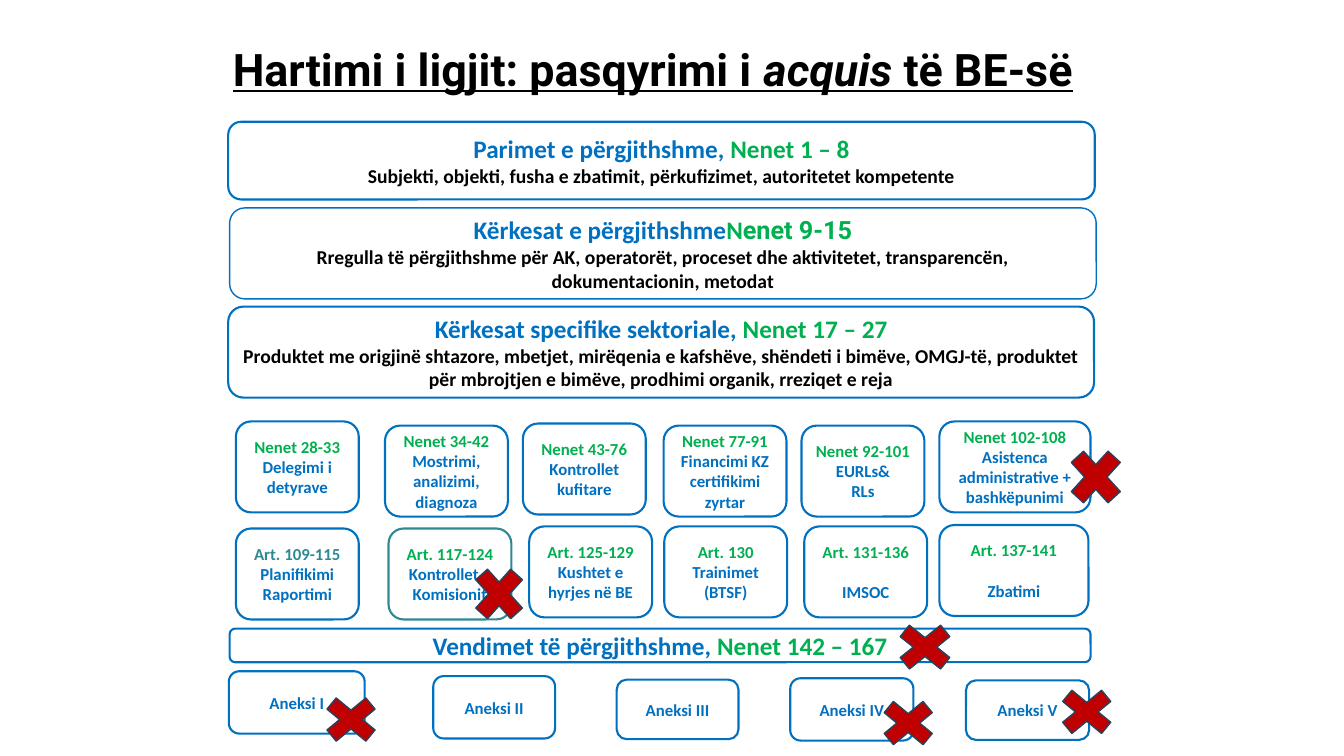
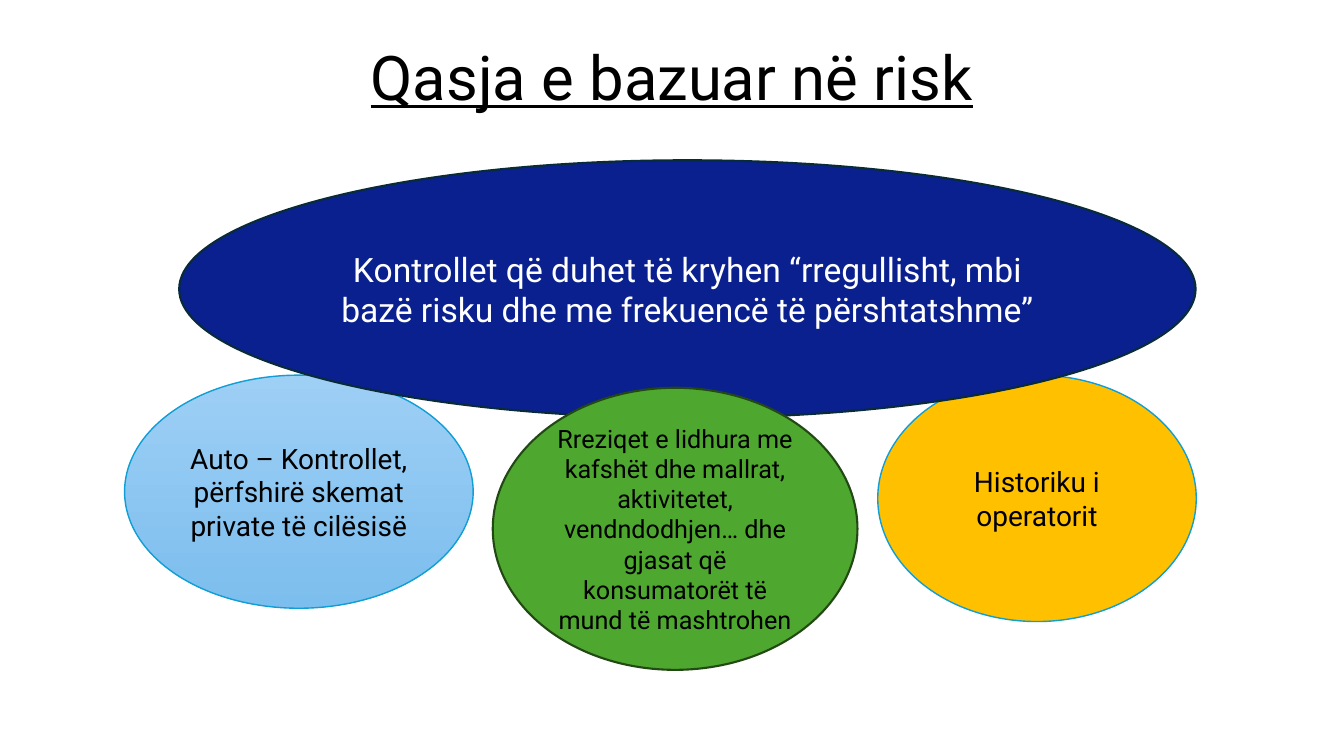
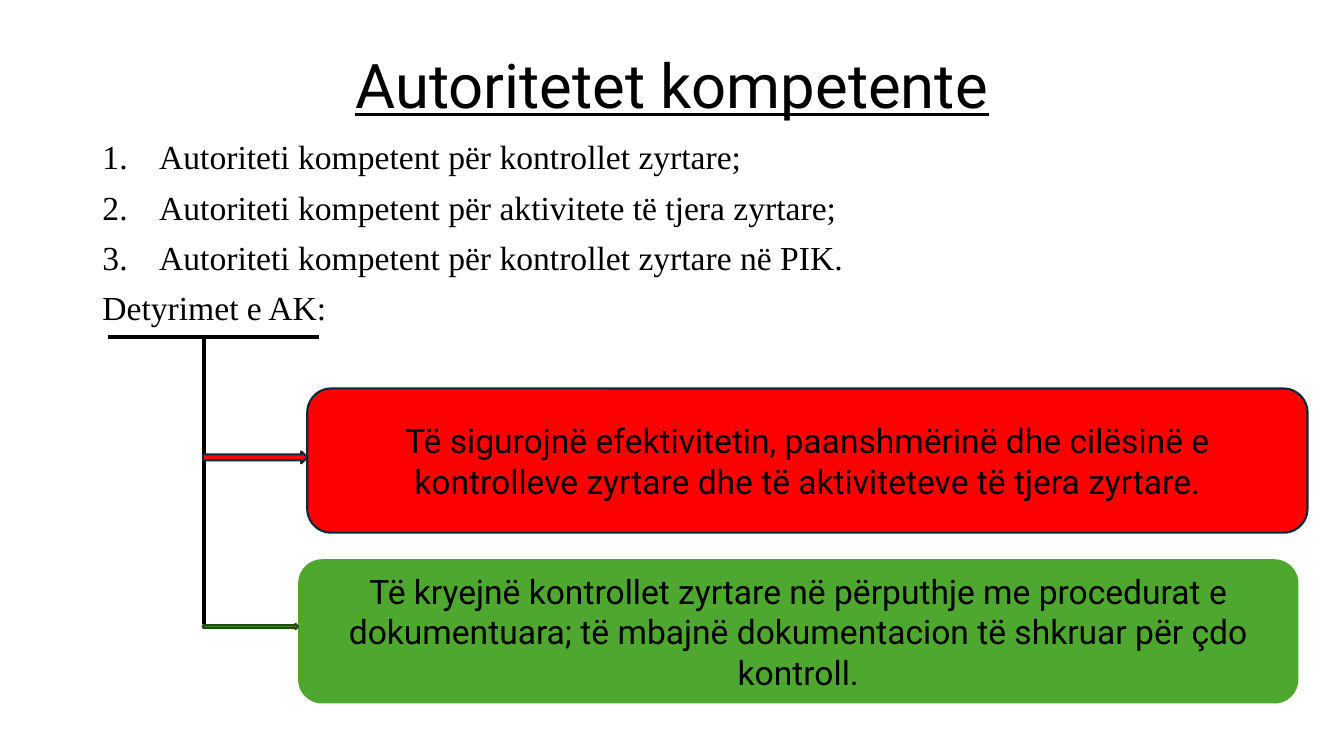
from dataclasses import dataclass
from typing import NamedTuple

from lxml import etree
from pptx import Presentation
from pptx.dml.color import RGBColor
from pptx.enum import shapes, text
from pptx.oxml import ns
from pptx.util import Pt

PRESET = shapes.MSO_SHAPE
CENTER = text.PP_ALIGN.CENTER
LEFT = text.PP_ALIGN.LEFT


@dataclass(frozen=True)
class Theme:
    black: str = "000000"
    white: str = "FFFFFF"
    blue: str = "0070C0"
    green: str = "00B050"
    teal: str = "2E8993"
    crimson: str = "C00000"
    slate: str = "28445D"
    navy: str = "0A208E"
    ink: str = "092A39"
    sky: str = "0F9ED5"
    sky_top: str = "9ECFF5"
    sky_bottom: str = "7CBEED"
    amber: str = "FFC000"
    red: str = "FF0000"
    leaf: str = "4EA72E"
    leaf_dark: str = "224914"
    sans: str = "Roboto"
    label: str = "Calibri"
    serif: str = "Times New Roman"
    title: int = 44
    long_title: int = 32
    large: int = 24
    medium: int = 20
    band: int = 18
    detail: int = 14
    card: int = 12


THEME = Theme()


class Frame(NamedTuple):
    left: float
    top: float
    width: float
    height: float

    def lengths(self) -> list[Pt]:
        return [Pt(value) for value in self]


class Span(NamedTuple):
    """A stretch of text; colour and font are given only where they differ."""
    text: str
    color: str = ""
    font: str = ""
    italic: bool = False


@dataclass(frozen=True)
class Line:
    """One paragraph with the look its spans share."""
    spans: tuple[Span, ...]
    size: float
    color: str = THEME.black
    font: str = THEME.sans
    bold: bool = False
    underline: bool = False
    align: text.PP_ALIGN = CENTER
    before: float = 0
    spacing: float = 1.0


@dataclass(frozen=True)
class Box:
    frame: Frame
    fill: str | tuple[str, str] = THEME.white
    outline: str = ""
    weight: float = 1.5
    preset: PRESET = PRESET.ROUNDED_RECTANGLE
    lines: tuple[Line, ...] = ()


class Card(NamedTuple):
    left: float
    top: float
    heading: str
    details: tuple[str, ...]
    width: float = 87.8
    gap: float = 0
    heading_color: str = THEME.green
    outline: str = THEME.blue


def rgb(value: str) -> RGBColor:
    return RGBColor.from_string(value)


def write_line(para, line: Line) -> None:
    para.alignment = line.align
    para.line_spacing = line.spacing
    para.space_before = Pt(line.before)
    font = para.font
    font.name, font.size, font.bold = line.font, Pt(line.size), line.bold
    font.underline = line.underline
    font.color.rgb = rgb(line.color)
    for span in line.spans:
        run = para.add_run()
        run.text = span.text
        if span.color:
            run.font.color.rgb = rgb(span.color)
        if span.font:
            run.font.name = span.font
        if span.italic:
            run.font.italic = True


def write_lines(frame, lines: tuple[Line, ...]) -> None:
    frame.word_wrap = True
    frame.auto_size = text.MSO_AUTO_SIZE.NONE
    for index, line in enumerate(lines):
        write_line(frame.add_paragraph() if index else frame.paragraphs[0], line)


def place(holder, frame: Frame) -> None:
    holder.left, holder.top, holder.width, holder.height = frame.lengths()


def add_page(deck, layout: int, frame: Frame, title: Line):
    page = deck.slides.add_slide(deck.slide_layouts[layout])
    place(page.shapes.title, frame)
    page.shapes.title.text_frame.vertical_anchor = text.MSO_ANCHOR.MIDDLE
    write_lines(page.shapes.title.text_frame, (title,))
    return page


def plain_title(words: str) -> Line:
    return Line((Span(words),), THEME.title, underline=True, spacing=0.9)


def add_box(page, box: Box) -> None:
    shape = page.shapes.add_shape(box.preset, *box.frame.lengths())
    shape.shadow.inherit = False
    if isinstance(box.fill, tuple):
        shape.fill.gradient()
        shape.fill.gradient_angle = 270
        for stop, color in zip(shape.fill.gradient_stops, box.fill):
            stop.color.rgb = rgb(color)
        for stop, position in zip(shape.fill.gradient_stops, (0, 1)):
            stop.position = position
    else:
        shape.fill.solid()
        shape.fill.fore_color.rgb = rgb(box.fill)
    if box.outline:
        shape.line.color.rgb = rgb(box.outline)
        shape.line.width = Pt(box.weight)
    else:
        shape.line.fill.background()
    if box.lines:
        shape.text_frame.vertical_anchor = text.MSO_ANCHOR.MIDDLE
        write_lines(shape.text_frame, box.lines)


def add_rule(page, start: tuple[float, float], end: tuple[float, float]) -> None:
    points = [Pt(value) for value in (*start, *end)]
    rule = page.shapes.add_connector(shapes.MSO_CONNECTOR.STRAIGHT, *points)
    rule.line.color.rgb = rgb(THEME.black)
    rule.line.width = Pt(3)
    etree.SubElement(rule.element.spPr, ns.qn("a:effectLst"))


def set_list_style(para, numbered: bool) -> None:
    """Number the paragraph with a hanging indent, or clear its bullet."""
    indent = Pt(40.5) if numbered else 0
    props = para._p.get_or_add_pPr()
    props.set("marL", str(indent))
    props.set("indent", str(-indent))
    if numbered:
        font = etree.SubElement(props, ns.qn("a:buFont"))
        font.set("typeface", "+mj-lt")
        etree.SubElement(props, ns.qn("a:buAutoNum")).set("type", "arabicPeriod")
    else:
        etree.SubElement(props, ns.qn("a:buNone"))


def label_line(size: float, *spans: Span, color: str = THEME.blue, before: float = 0) -> Line:
    return Line(spans, size, color, THEME.label, bold=True, before=before)


def band_box(frame: Frame, topic: str, articles: tuple[Span, ...], detail: str = "",
             weight: float = 1.5) -> Box:
    lines = [label_line(THEME.band, Span(topic), *articles)]
    if detail:
        lines.append(label_line(THEME.detail, Span(detail), color=THEME.black))
    return Box(frame, outline=THEME.blue, weight=weight, lines=tuple(lines))


def card_box(card: Card) -> Box:
    heading = label_line(THEME.card, Span(card.heading), color=card.heading_color)
    details = [label_line(THEME.card, Span(words), before=0 if index else card.gap)
               for index, words in enumerate(card.details)]
    return Box(Frame(card.left, card.top, card.width, 65), outline=card.outline,
               lines=(heading, *details))


def build_law_page(deck) -> None:
    title = Line((Span("Hartimi i ligjit: pasqyrimi i "), Span("acquis", italic=True),
                  Span(" të BE-së")), THEME.long_title, bold=True, underline=True)
    page = add_page(deck, 5, Frame(81.5, 21, 769.5, 55.5), title)
    green = THEME.green
    bands = (
        band_box(Frame(163, 87, 619, 55.5), "Parimet e përgjithshme, ",
                 (Span("Nenet 1 – 8", green),),
                 "Subjekti, objekti, fusha e zbatimit, përkufizimet, autoritetet kompetente"),
        band_box(Frame(164, 148.5, 619, 65), "Kërkesat e përgjithshme",
                 (Span("N", green), Span("enet 9-15", green, THEME.sans)),
                 "Rregulla të përgjithshme për AK, operatorët, proceset dhe aktivitetet, "
                 "transparencën, dokumentacionin, metodat", weight=1),
        band_box(Frame(163, 219, 618.5, 65), "Kërkesat specifike sektoriale, ",
                 (Span("Nenet 17 – 27", green),),
                 "Produktet me origjinë shtazore, mbetjet, mirëqenia e kafshëve, shëndeti i "
                 "bimëve, OMGJ-të, produktet për mbrojtjen e bimëve, prodhimi organik, "
                 "rreziqet e reja"),
        band_box(Frame(164, 449, 615, 24), "Vendimet të përgjithshme, ",
                 (Span("Nenet 142 – 167", green),)),
    )
    cards = (
        Card(168.5, 301, "Nenet 28-33", ("Delegimi i detyrave",)),
        Card(275, 304, "Nenet 34-42", ("Mostrimi, analizimi, diagnoza",)),
        Card(373.5, 302.5, "Nenet 43-76", ("Kontrollet kufitare",)),
        Card(474, 304, "Nenet 77-91", ("Financimi KZ certifikimi zyrtar",)),
        Card(572.5, 304, "Nenet 92-101", ("EURLs&", "RLs")),
        Card(671, 301, "Nenet 102-108", ("Asistenca administrative + bashkëpunimi",), 108),
        Card(168.5, 377.5, "Art. 109-115", ("Planifikimi Raportimi",),
             heading_color=THEME.teal),
        Card(277.5, 377.5, "Art. 117-124", ("Kontrollet e Komisionit",), outline=THEME.teal),
        Card(378, 376, "Art. 125-129", ("Kushtet e hyrjes në BE",)),
        Card(474.5, 376, "Art. 130", ("Trainimet", "(BTSF)")),
        Card(574.5, 376, "Art. 131-136", ("IMSOC",), gap=14.5),
        Card(671, 375, "Art. 137-141", ("Zbatimi",), 106.5, gap=14.5),
    )
    annexes = (
        ("I", Frame(163.5, 479.5, 97, 44.5)),
        ("II", Frame(309.5, 483, 87, 44.5)),
        ("III", Frame(440.5, 485.5, 87, 42.5)),
        ("IV", Frame(564.5, 484.5, 88, 44.5)),
        ("V", Frame(690, 486, 88, 42.5)),
    )
    crosses = (
        Frame(757.5, 313, 50.5, 55.5), Frame(332.5, 397.5, 48, 53.5),
        Frame(633, 440, 55.5, 44.5), Frame(224, 492, 53.5, 44),
        Frame(622, 494.5, 53.5, 44), Frame(749.5, 486.5, 53.5, 44),
    )
    boxes = [*bands, *map(card_box, cards)]
    boxes += [Box(frame, outline=THEME.blue,
                  lines=(label_line(THEME.card, Span(f"Aneksi {number}")),))
              for number, frame in annexes]
    boxes += [Box(frame, THEME.crimson, THEME.slate, 1, PRESET.MATH_MULTIPLY)
              for frame in crosses]
    for box in boxes:
        add_box(page, box)


def build_risk_page(deck) -> None:
    page = add_page(deck, 5, Frame(66, 29, 828, 57.5), plain_title("Qasja e bazuar në risk"))

    def oval(frame: Frame, words: str, size: float, fill: str | tuple[str, str],
             outline: str, weight: float, color: str = THEME.black) -> Box:
        return Box(frame, fill, outline, weight, PRESET.OVAL,
                   (Line((Span(words),), size, color),))

    ovals = (
        oval(Frame(89, 268, 249, 166.5),
             "Auto – Kontrollet, përfshirë skemat private të cilësisë",
             THEME.medium, (THEME.sky_top, THEME.sky_bottom), THEME.sky, 1),
        oval(Frame(627, 268, 227.5, 176), "Historiku i operatorit",
             THEME.medium, THEME.amber, THEME.sky, 1),
        oval(Frame(128, 114.5, 726, 184),
             "Kontrollet që duhet të kryhen “rregullisht, mbi bazë risku dhe me frekuencë "
             "të përshtatshme”", THEME.large, THEME.navy, THEME.ink, 1.5, THEME.white),
        oval(Frame(352, 277, 260.5, 201.5),
             "Rreziqet e lidhura me kafshët dhe mallrat, aktivitetet, vendndodhjen… dhe "
             "gjasat që konsumatorët të mund të mashtrohen",
             THEME.band, THEME.leaf, THEME.leaf_dark, 1.5),
    )
    for box in ovals:
        add_box(page, box)


def build_authority_page(deck) -> None:
    page = add_page(deck, 1, Frame(66, 29, 828, 68.5), plain_title("Autoritetet kompetente"))
    entries = (
        ("Autoriteti kompetent për kontrollet zyrtare;", True),
        ("Autoriteti kompetent për aktivitete të tjera zyrtare;", True),
        ("Autoriteti kompetent për kontrollet zyrtare në PIK.", True),
        ("Detyrimet e AK:", False),
    )
    body = page.placeholders[1]
    place(body, Frame(66, 97, 828, 389))
    frame = body.text_frame
    frame.word_wrap = True
    frame.auto_size = text.MSO_AUTO_SIZE.NONE
    for index, (words, numbered) in enumerate(entries):
        para = frame.add_paragraph() if index else frame.paragraphs[0]
        set_list_style(para, numbered)
        write_line(para, Line((Span(words),), THEME.large, font=THEME.serif, align=LEFT,
                              before=10 if index else 0, spacing=0.9))

    duties = (
        (Frame(219.5, 277.5, 714.5, 103), THEME.red, THEME.ink,
         "Të sigurojnë efektivitetin, paanshmërinë dhe cilësinë e kontrolleve zyrtare dhe "
         "të aktiviteteve të tjera zyrtare."),
        (Frame(213, 399.5, 714.5, 103), THEME.leaf, "",
         "Të kryejnë kontrollet zyrtare në përputhje me procedurat e dokumentuara; të "
         "mbajnë dokumentacion të shkruar për çdo kontroll."),
    )
    for duty_frame, fill, outline, words in duties:
        add_box(page, Box(duty_frame, fill, outline,
                          lines=(Line((Span(words),), THEME.large),)))
    add_rule(page, (77, 240.5), (228, 240.5))
    add_rule(page, (145.5, 240.5), (145.5, 446))
    arrows = (
        (Frame(145, 322.5, 74.5, 8.5), THEME.red, THEME.ink),
        (Frame(145, 445.5, 68, 4), THEME.leaf, THEME.leaf_dark),
    )
    for arrow_frame, fill, outline in arrows:
        add_box(page, Box(arrow_frame, fill, outline, preset=PRESET.RIGHT_ARROW))


def main() -> None:
    deck = Presentation()
    deck.slide_width, deck.slide_height = Pt(960), Pt(540)
    build_law_page(deck)
    build_risk_page(deck)
    build_authority_page(deck)
    deck.save("out.pptx")


if __name__ == "__main__":
    main()
